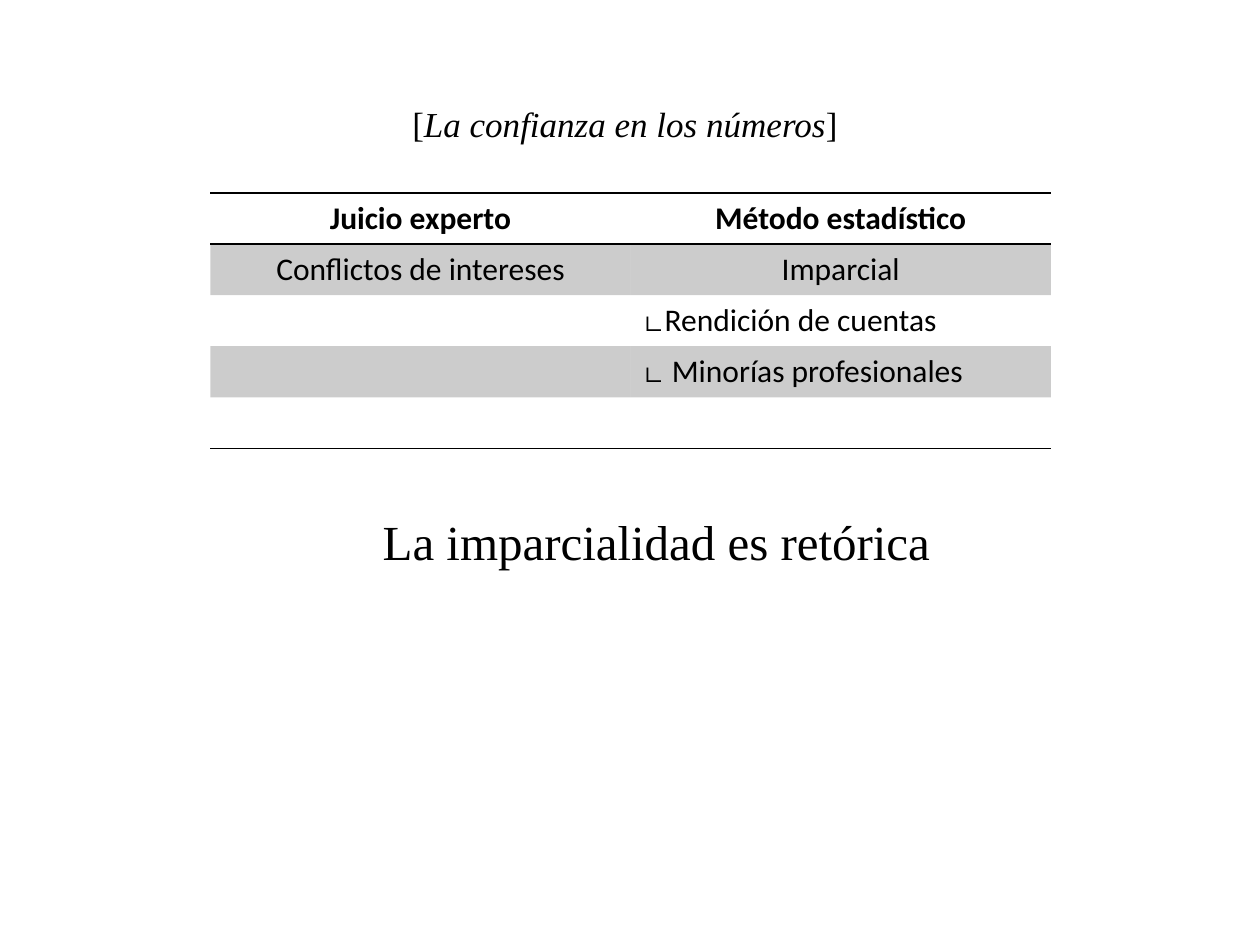
from lxml import etree
from pptx import Presentation
from pptx.dml.color import RGBColor
from pptx.enum import text
from pptx.oxml import ns
from pptx.util import Inches, Pt

# Content
HEAD = [("[", False), ("La confianza en los números", True), ("]", False)]
CLOSE = [("La imparcialidad es retórica", False)]
ROWS = [
    ("Juicio experto", "Método estadístico"),
    ("Conflictos de intereses", "Imparcial"),
    ("", "∟Rendición de cuentas"),
    ("", "∟ Minorías profesionales"),
    ("", ""),
]
BLACK = RGBColor(0, 0, 0)
MID, LEFT = text.PP_ALIGN.CENTER, text.PP_ALIGN.LEFT
PLAIN = "{2D5ABB26-0587-4C30-8999-92F81FD0307C}"  # no style, no grid

# Paragraphs: runs, font size, left margin, format
PARAS = [
    (HEAD, 20, 0, {"space_before": Pt(0)}),
    (CLOSE, 28, 0.5, {"level": 1, "space_before": Pt(210),
                      "space_after": Pt(20)}),
]


def put(obj, vals):
    for key, val in vals.items():
        setattr(obj, key, val)


def write(para, words, **font):
    run = para.add_run()
    run.text = words
    put(run.font, font)
    run.font.color.rgb = BLACK


def edge(cell, side):
    """Draw a 1 pt black line on one side of a cell."""
    line = etree.Element(ns.qn("a:ln" + side), w=str(Pt(1)))
    fill = etree.SubElement(line, ns.qn("a:solidFill"))
    etree.SubElement(fill, ns.qn("a:srgbClr"), val=str(BLACK))
    props = cell._tc.get_or_add_tcPr()
    lines = props.findall(ns.qn("a:lnT"))
    props.insert(len(lines), line)


def shade(cell):
    """Fill a cell with black at 20 % opacity."""
    cell.fill.solid()
    cell.fill.fore_color.rgb = BLACK
    tint = cell._tc.tcPr.find(".//" + ns.qn("a:srgbClr"))
    etree.SubElement(tint, ns.qn("a:alpha"), val="20000")


deck = Presentation()
put(deck, {"slide_width": Inches(10), "slide_height": Inches(7.5)})
slide = deck.slides.add_slide(deck.slide_layouts[1])
title = slide.shapes.title._element
title.getparent().remove(title)

# Heading and closing line
body = slide.placeholders[1]
put(body, {"left": Inches(0.67), "top": Inches(0.76),
           "width": Inches(8.58), "height": Inches(5.3)})
frame = body.text_frame
frame.auto_size = text.MSO_AUTO_SIZE.NONE
for num, (runs, size, left, form) in enumerate(PARAS):
    para = frame.add_paragraph() if num else frame.paragraphs[0]
    put(para, {"alignment": MID, **form})
    props = para._p.get_or_add_pPr()
    props.set("marL", str(Inches(left)))
    props.set("indent", "0")
    etree.SubElement(props, ns.qn("a:buNone"))
    for words, slant in runs:
        write(para, words, name="Times New Roman", size=Pt(size),
              italic=slant)

# Table
grid = slide.shapes.add_table(len(ROWS), 2, Inches(1.67), Inches(1.53),
                              Inches(6.67), Inches(2.03))
table = grid.table
put(table, {"first_row": True, "horz_banding": True})
table._tbl.tblPr.find(ns.qn("a:tableStyleId")).text = PLAIN
last = len(ROWS) - 1
for r, row in enumerate(ROWS):
    for c, words in enumerate(row):
        cell = table.cell(r, c)
        if r % 2:
            shade(cell)
        else:
            cell.fill.background()
        if r == 0:
            edge(cell, "T")
        if r in (0, last):
            edge(cell, "B")
        para = cell.text_frame.paragraphs[0]
        para.alignment = MID if r < 2 else LEFT
        if words:
            write(para, words, name="Calibri", size=Pt(18), bold=r == 0)

deck.save("out.pptx")
